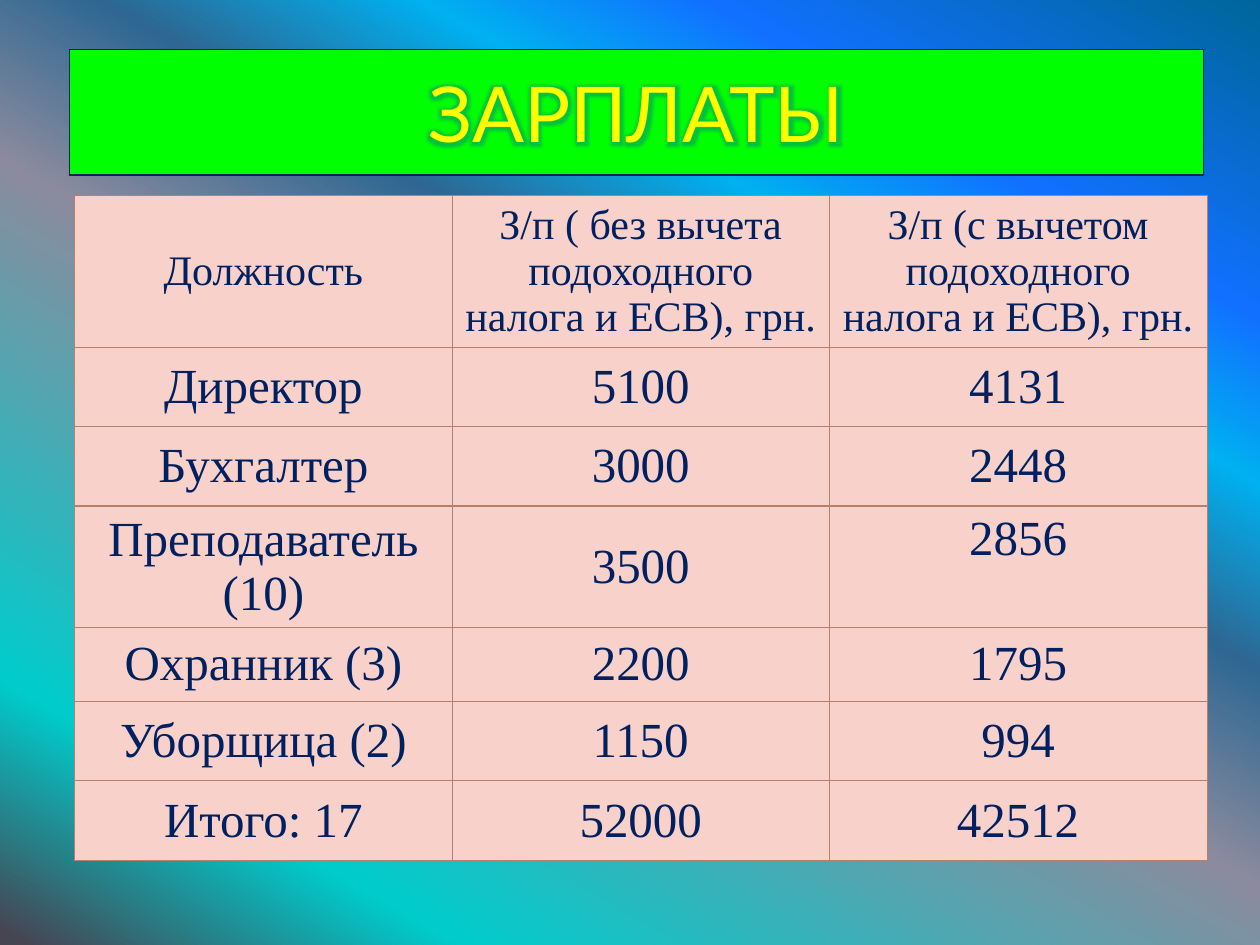
from pptx import Presentation
from pptx.dml.color import RGBColor
from pptx.enum.text import MSO_ANCHOR as Anchor, PP_ALIGN as Align
from pptx.oxml import parse_xml
from pptx.oxml.ns import nsdecls, qn
from pptx.util import Inches, Pt

NAVY = RGBColor(0x00, 0x20, 0x60)
GREEN = RGBColor(0x00, 0xFF, 0x00)
YELLOW = RGBColor(0xFF, 0xFF, 0x00)
GLOW = RGBColor(0x00, 0x66, 0x99)
PINK = RGBColor(0xF8, 0xD2, 0xCA)
BROWN = RGBColor(0xB6, 0x80, 0x6E)

# Background stops: position in percent, colour
SKY = [
    (1, RGBColor(0x46, 0x46, 0x53)),
    (16, RGBColor(0x00, 0xCC, 0xCC)),
    (47, RGBColor(0x8B, 0x8B, 0x9D)),
    (60, RGBColor(0x2E, 0x67, 0x92)),
    (71, RGBColor(0x00, 0xB0, 0xF0)),
    (81, RGBColor(0x11, 0x70, 0xFF)),
    (100, RGBColor(0x00, 0x66, 0x99)),
]

SALARIES = [
    ("Должность", "З/п ( без вычета подоходного налога и ЕСВ), грн.",
     "З/п (с вычетом подоходного налога и ЕСВ), грн."),
    ("Директор", "5100", "4131"),
    ("Бухгалтер", "3000", "2448"),
    ("Преподаватель (10)", "3500", "2856"),
    ("Охранник (3)", "2200", "1795"),
    ("Уборщица (2)", "1150", "994"),
    ("Итого: 17", "52000", "42512"),
]
COLUMN_WIDTHS = [3, 2.99, 3]
ROW_HEIGHTS = [1.08, 0.63, 0.63, 0.63, 0.59, 0.63, 0.63]


class SlideBuilder:
    title_font = "Lato"
    table_font = "Times New Roman"

    def __init__(self, slide):
        self.slide = slide

    def background(self, stops, angle):
        fill = self.slide.background.fill
        fill.gradient()
        fill.gradient_angle = angle
        stop_list = next(self.slide.element.iter(qn("a:gsLst")))
        for stop in list(stop_list):
            stop_list.remove(stop)
        for percent, color in stops:
            stop_list.append(parse_xml(
                f'<a:gs {nsdecls("a")} pos="{percent * 1000}">'
                f'<a:srgbClr val="{color}"/></a:gs>'))

    def add_text(self, frame, text, font, size, color):
        paragraph = frame.paragraphs[0]
        paragraph.alignment = Align.CENTER
        run = paragraph.add_run()
        run.text = text
        run.font.name = font
        run.font.size = Pt(size)
        run.font.bold = False
        run.font.color.rgb = color
        return run

    def title(self, text, left, top, width, height):
        banner = self.slide.shapes.title
        banner.left, banner.top = Inches(left), Inches(top)
        banner.width, banner.height = Inches(width), Inches(height)
        banner.fill.solid()
        banner.fill.fore_color.rgb = GREEN
        banner.line.color.rgb = NAVY
        banner.line.width = Pt(0.75)
        banner.text_frame.vertical_anchor = Anchor.MIDDLE
        run = self.add_text(banner.text_frame, text, self.title_font, 44, YELLOW)
        # Soft glow around the letters
        run.font._element.find(qn("a:solidFill")).addnext(parse_xml(
            f'<a:effectLst {nsdecls("a")}><a:glow rad="{Pt(8)}">'
            f'<a:srgbClr val="{GLOW}"><a:alpha val="40000"/></a:srgbClr>'
            '</a:glow></a:effectLst>'))

    def borders(self, cell):
        properties = cell._tc.get_or_add_tcPr()
        for side in ("lnL", "lnR", "lnT", "lnB"):
            properties.append(parse_xml(
                f'<a:{side} {nsdecls("a")} w="{Pt(0.75)}"><a:solidFill>'
                f'<a:srgbClr val="{BROWN}"/></a:solidFill></a:{side}>'))

    def table(self, rows, widths, heights, left, top):
        table = self.slide.shapes.add_table(
            len(rows), len(widths), Inches(left), Inches(top),
            Inches(sum(widths)), Inches(sum(heights))).table
        table.first_row = table.horz_banding = False
        for column, width in zip(table.columns, widths):
            column.width = Inches(width)
        for row, height in zip(table.rows, heights):
            row.height = Inches(height)
        for r, values in enumerate(rows):
            for c, value in enumerate(values):
                cell = table.cell(r, c)
                self.borders(cell)
                cell.fill.solid()
                cell.fill.fore_color.rgb = PINK
                cell.vertical_anchor = Anchor.MIDDLE
                self.add_text(cell.text_frame, value, self.table_font,
                              24 if r == 0 else 28, NAVY)
        return table


def main():
    deck = Presentation()
    deck.slide_width, deck.slide_height = Inches(10), Inches(7.5)
    builder = SlideBuilder(deck.slides.add_slide(deck.slide_layouts[5]))

    builder.background(SKY, 60)
    builder.title("ЗАРПЛАТЫ", 0.55, 0.39, 9, 1)
    salaries = builder.table(SALARIES, COLUMN_WIDTHS, ROW_HEIGHTS, 0.59, 1.55)
    # The teacher's net pay sits at the top of its cell
    salaries.cell(3, 2).vertical_anchor = Anchor.TOP

    deck.save("out.pptx")


if __name__ == "__main__":
    main()
